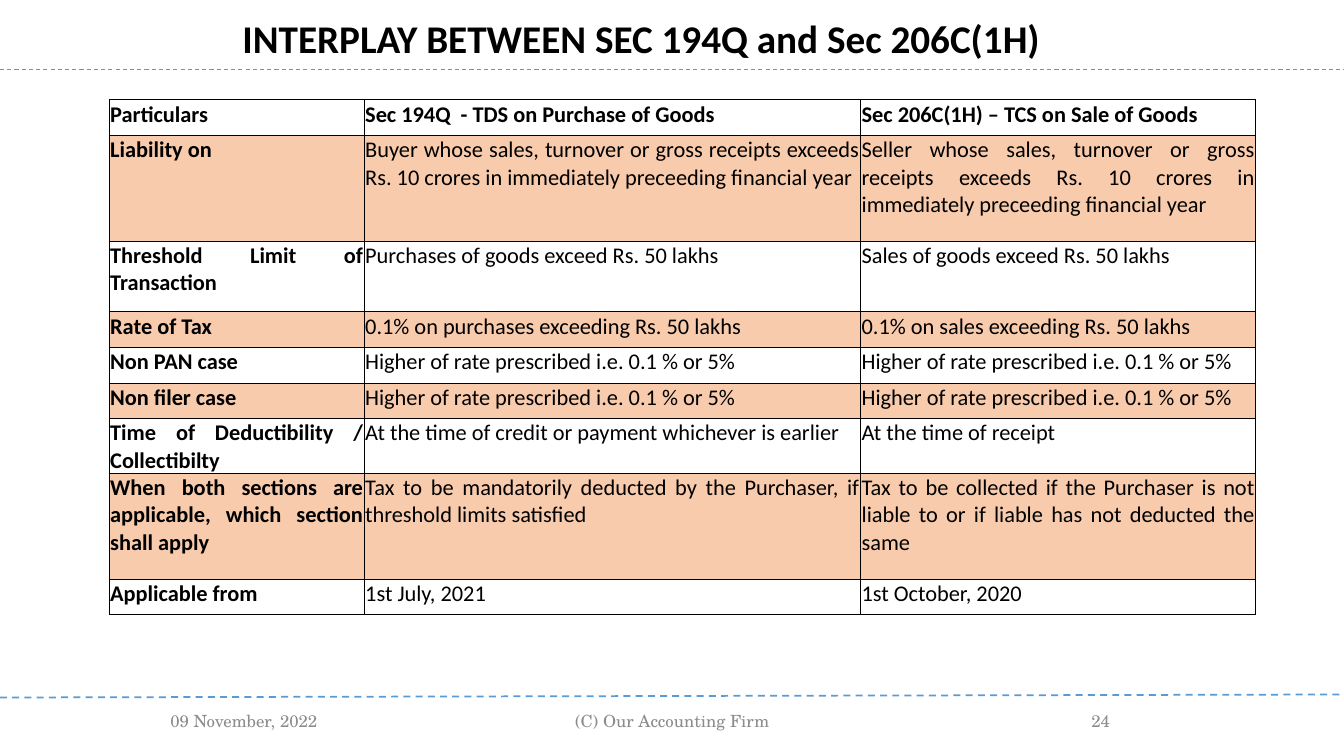
from typing import NamedTuple

import pptx
import pptx.dml.color
import pptx.enum.dml
import pptx.enum.shapes
import pptx.enum.text
import pptx.oxml
import pptx.oxml.ns
import pptx.util

Pt = pptx.util.Pt
Align = pptx.enum.text.PP_ALIGN
Anchor = pptx.enum.text.MSO_ANCHOR
Color = pptx.dml.color.RGBColor

BLACK = Color(0x00, 0x00, 0x00)
GREY = Color(0x8C, 0x8C, 0x8C)
BLUE = Color(0x5B, 0x9B, 0xD5)
PEACH = Color(0xF8, 0xCB, 0xAD)
SANS = "Calibri"
SERIF = "TeX Gyre Schola"
WIDTH, HEIGHT = 960, 540


class Label(NamedTuple):
    text: str
    left: float
    top: float
    width: float
    height: float
    font: str
    size: float
    color: Color
    bold: bool
    anchor: Anchor


class Rule(NamedTuple):
    start: float
    end: float
    color: Color
    weight: float


class Row(NamedTuple):
    height: float
    cells: tuple[str, str, str]


def footer(text: str, left: float, width: float) -> Label:
    return Label(text, left, 500.4, width, 28.8, SERIF, 12, GREY, False, Anchor.MIDDLE)


LABELS = [
    footer("09 November, 2022", 66.24, 216),
    footer("(C) Our Accounting Firm", 318.24, 324),
    footer("24", 678.24, 216),
    Label("INTERPLAY BETWEEN SEC 194Q and Sec 206C(1H)", 16.56, 6.48, 882.72, 41.04,
          SANS, 28, BLACK, True, Anchor.TOP),
]
RULES = [Rule(49.68, 49.68, GREY, 0.75), Rule(498.24, 496.08, BLUE, 1.25)]

LOW, MID, TALL = 25.4, 50.4, 75.6
HIGHER = "Higher of rate prescribed i.e. 0.1 % or 5%"
COLS = [182.16, 354.6, 282.24]
ROWS = [
    Row(LOW, ("Particulars", "Sec 194Q  - TDS on Purchase of Goods",
              "Sec 206C(1H) – TCS on Sale of Goods")),
    Row(TALL, ("Liability on",
               "Buyer whose sales, turnover or gross receipts exceeds Rs. 10 crores "
               "in immediately preceeding financial year",
               "Seller whose sales, turnover or gross receipts exceeds Rs. 10 crores "
               "in immediately preceeding financial year")),
    Row(MID, ("Threshold Limit of Transaction", "Purchases of goods exceed Rs. 50 lakhs",
              "Sales of goods exceed Rs. 50 lakhs")),
    Row(LOW, ("Rate of Tax", "0.1% on purchases exceeding Rs. 50 lakhs",
              "0.1% on sales exceeding Rs. 50 lakhs")),
    Row(LOW, ("Non PAN case", HIGHER, HIGHER)),
    Row(LOW, ("Non filer case", HIGHER, HIGHER)),
    Row(39, ("Time of Deductibility / Collectibilty",
             "At the time of credit or payment whichever is earlier",
             "At the time of receipt")),
    Row(TALL, ("When both sections are applicable, which section shall apply",
               "Tax to be mandatorily deducted by the Purchaser, if threshold limits satisfied",
               "Tax to be collected if the Purchaser is not liable to or if liable "
               "has not deducted the same")),
    Row(LOW, ("Applicable from", "1st July, 2021", "1st October, 2020")),
]


def style(para, font: str, size: float, color: Color, bold: bool, align: Align) -> None:
    para.alignment = align
    para.font.name = font
    para.font.size = Pt(size)
    para.font.color.rgb = color
    para.font.bold = bold


def add_label(slide, label: Label) -> None:
    box = slide.shapes.add_textbox(
        Pt(label.left), Pt(label.top), Pt(label.width), Pt(label.height))
    frame = box.text_frame
    frame.word_wrap = True
    frame.vertical_anchor = label.anchor
    frame.text = label.text
    style(frame.paragraphs[0], label.font, label.size, label.color, label.bold, Align.CENTER)


def add_rule(slide, rule: Rule) -> None:
    line = slide.shapes.add_connector(
        pptx.enum.shapes.MSO_CONNECTOR.STRAIGHT, 0, Pt(rule.start), Pt(WIDTH), Pt(rule.end))
    line.line.color.rgb = rule.color
    line.line.width = Pt(rule.weight)
    line.line.dash_style = pptx.enum.dml.MSO_LINE.DASH
    props = line._element.spPr
    props.append(props.makeelement(pptx.oxml.ns.qn("a:effectLst"), {}))


def add_edges(cell) -> None:
    """Give all four sides of a cell a thin black border."""
    props = cell._tc.get_or_add_tcPr()
    for side in "LRTB":
        props.append(pptx.oxml.parse_xml(
            f'<a:ln{side} {pptx.oxml.ns.nsdecls("a")} w="{Pt(0.5)}">'
            f'<a:solidFill><a:srgbClr val="{BLACK}"/></a:solidFill></a:ln{side}>'))


def fill_cell(cell, text: str, bold: bool, align: Align, shade: bool) -> None:
    cell.margin_left = cell.margin_right = cell.margin_top = Pt(0.72)
    cell.margin_bottom = 0
    cell.text = text
    style(cell.text_frame.paragraphs[0], SANS, 16, BLACK, bold, align)
    add_edges(cell)
    if shade:
        cell.fill.solid()
        cell.fill.fore_color.rgb = PEACH
    else:
        cell.fill.background()


def add_grid(slide) -> None:
    table = slide.shapes.add_table(
        len(ROWS), len(COLS), Pt(78), Pt(71.28),
        Pt(sum(COLS)), Pt(sum(row.height for row in ROWS))).table
    table.first_row = table.horz_banding = False
    for col, width in zip(table.columns, COLS):
        col.width = Pt(width)
    last = len(ROWS) - 1
    for r, row in enumerate(ROWS):
        table.rows[r].height = Pt(row.height)
        align = Align.LEFT if r in (0, last) else Align.JUSTIFY
        for c, text in enumerate(row.cells):
            fill_cell(table.cell(r, c), text, r == 0 or c == 0, align, r % 2 == 1)


def main() -> None:
    deck = pptx.Presentation()
    deck.slide_width, deck.slide_height = Pt(WIDTH), Pt(HEIGHT)
    slide = deck.slides.add_slide(deck.slide_layouts[6])
    for rule in RULES:
        add_rule(slide, rule)
    for label in LABELS:
        add_label(slide, label)
    add_grid(slide)
    deck.save("out.pptx")


if __name__ == "__main__":
    main()
